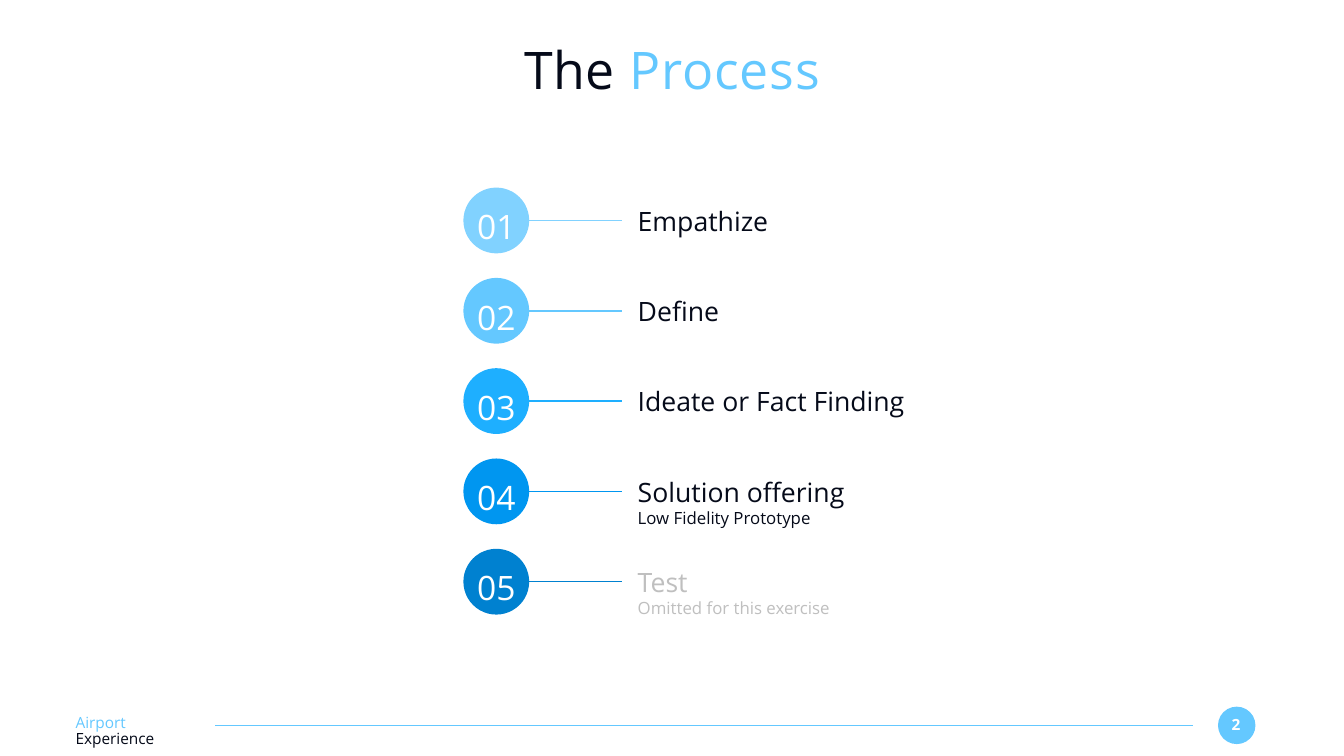
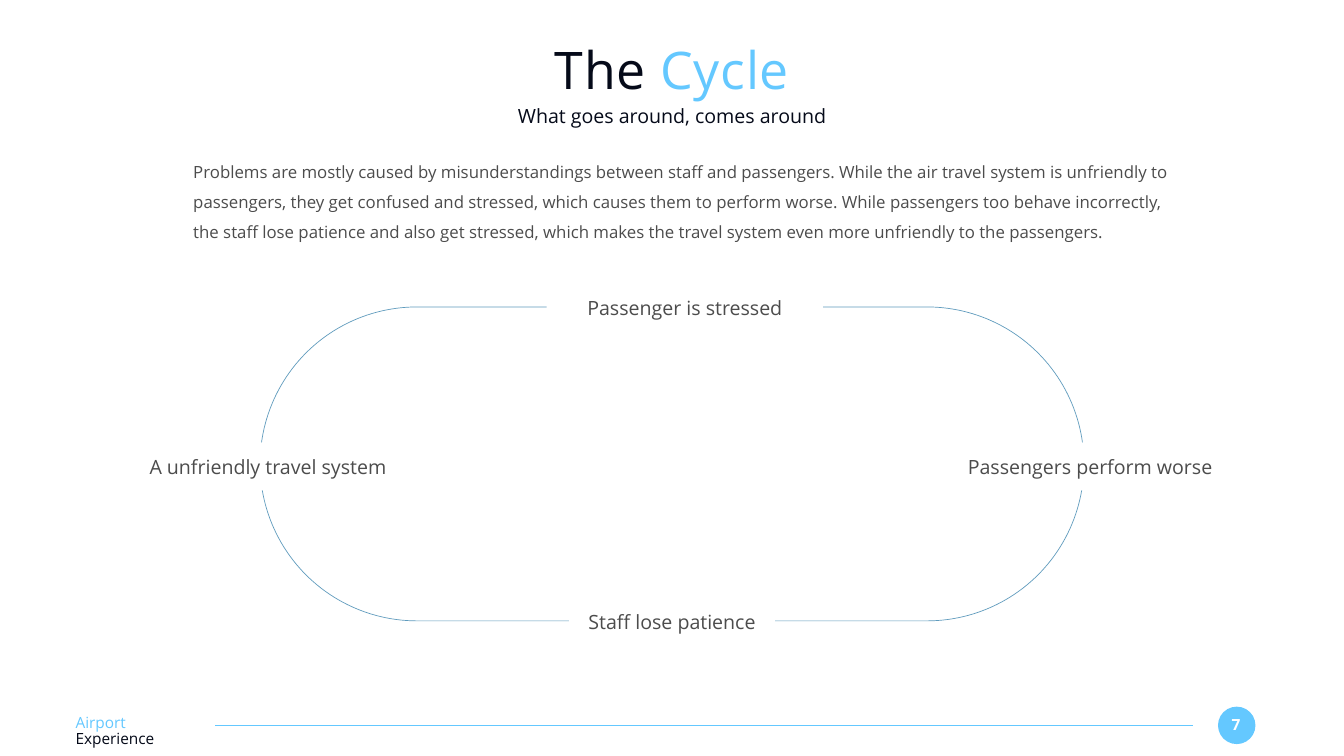
from lxml import etree
from pptx import Presentation
from pptx.dml.color import RGBColor
from pptx.enum.shapes import MSO_CONNECTOR as LINK, MSO_SHAPE as KIND
from pptx.enum.text import MSO_ANCHOR as ANCHOR, MSO_AUTO_SIZE as AUTO, PP_ALIGN as ALIGN
from pptx.oxml.ns import qn
from pptx.util import Pt

HUES = {
    "ink": "050A19", "sky": "64C8FF", "white": "FFFFFF", "gray": "4C4C4C",
    "mute": "BFBFBF", "ring": "5F9BBD", "step1": "81D2FF", "step2": "64C8FF",
    "step3": "1EAFFF", "step4": "0096F0", "step5": "0081D0",
}
RGB = {name: RGBColor.from_string(code) for name, code in HUES.items()}
FONT = "Open Sans"


def write(shape, paras, align=ALIGN.CENTER, anchor=ANCHOR.MIDDLE, pad=(0, 0), gap=None):
    """Fill a shape with paragraphs, each given as (size, (text, hue), ...)."""
    frame = shape.text_frame
    frame.word_wrap = True
    frame.auto_size = AUTO.NONE
    frame.vertical_anchor = anchor
    frame.margin_left = frame.margin_right = Pt(pad[0])
    frame.margin_top = frame.margin_bottom = Pt(pad[1])
    for i, (size, *runs) in enumerate(paras):
        para = frame.add_paragraph() if i else frame.paragraphs[0]
        para.alignment = align
        if gap:
            para.line_spacing = gap
        para.font.name, para.font.size = FONT, Pt(size)
        para.font.color.rgb = RGB[runs[0][1]]
        for text, hue in runs:
            run = para.add_run()
            run.text = text
            if hue != runs[0][1]:
                run.font.color.rgb = RGB[hue]
    return frame.paragraphs[0]


def draw(shapes, kind, box, fill=None):
    shape = shapes.add_shape(kind, *map(Pt, box))
    shape.shadow.inherit = False
    shape.line.fill.background()
    if fill:
        shape.fill.solid()
        shape.fill.fore_color.rgb = RGB[fill]
    else:
        shape.fill.background()
    return shape


deck = Presentation()
deck.slide_width, deck.slide_height = Pt(1920), Pt(1080)
rules = []

# Shared title and footer
slides = []
for layout, word, page in [(5, "Process", "2"), (1, "Cycle", "7")]:
    slide = deck.slides.add_slide(deck.slide_layouts[layout])
    slides.append(slide)
    shapes = slide.shapes

    title = shapes.title
    title.left, title.top, title.width, title.height = map(Pt, (132, 52.5, 1656, 91.5))
    para = write(title, [(74, ("The ", "ink"), (word, "sky"))])
    for run in para.runs:
        run.font._element.set("spc", "100")

    draw(shapes, KIND.OVAL, (1740, 1009.5, 53.5, 53.5), "sky")
    number = shapes.add_textbox(*map(Pt, (1744.5, 1021.5, 42.5, 26.5)))
    write(number, [(22, (page, "white"))]).font.bold = True
    rule = shapes.add_connector(LINK.STRAIGHT, Pt(1704), Pt(1036), Pt(307.5), Pt(1036))
    rules.append((rule, "sky", 1.5))
    brand = shapes.add_textbox(*map(Pt, (108, 1021, 186.5, 26.5)))
    write(brand, [(22, ("Airport ", "sky"), ("Experience", "ink"))],
          ALIGN.LEFT, ANCHOR.TOP, gap=0.9)

process, cycle = slides

# Process: five numbered steps
steps = [
    ("Empathize", None, "ink"),
    ("Define", None, "ink"),
    ("Ideate or Fact Finding", None, "ink"),
    ("Solution offering", "Low Fidelity Prototype", "ink"),
    ("Test", "Omitted for this exercise", "mute"),
]
for i, (name, note, hue) in enumerate(steps):
    top = 268 + 129 * i
    mid = top + 47
    tint = f"step{i + 1}"
    group = process.shapes.add_group_shape().shapes
    draw(group, KIND.OVAL, (662, top, 94, 94), tint)
    rule = group.add_connector(LINK.STRAIGHT, Pt(748), Pt(mid), Pt(889), Pt(mid))
    rules.append((rule, tint, 2.25))
    number = group.add_textbox(*map(Pt, (672, top + 14.5, 74, 70)))
    write(number, [(48, (f"{i + 1:02}", "white"))], gap=1.2)
    paras = [(38, (name, hue))]
    if note:
        paras.append((24, (note, hue)))
    label = group.add_textbox(*map(Pt, (911, top + 24, 453, 75 if note else 46)))
    write(label, paras, ALIGN.LEFT)

# Cycle: subtitle, summary and loop
body = cycle.placeholders[1]
body.left, body.top, body.width, body.height = map(Pt, (132, 146, 1656, 35.5))
para = write(body, [(28, ("What goes around, comes around", "ink"))], anchor=ANCHOR.BOTTOM)
para.space_before = Pt(20)
props = para._p.get_or_add_pPr()
props.set("marL", "0")
props.set("indent", "0")
props.find(qn("a:defRPr")).addprevious(etree.Element(qn("a:buNone")))

summary = cycle.shapes.add_textbox(*map(Pt, (269, 213, 1418.5, 133)))
write(summary, [(24, (
    "Problems are mostly caused by misunderstandings between staff and passengers. "
    "While the air travel system is unfriendly to passengers, they get confused and "
    "stressed, which causes them to perform worse. While passengers too behave "
    "incorrectly, the staff lose patience and also get stressed, which makes the travel "
    "system even more unfriendly to the passengers.", "gray"))],
    ALIGN.LEFT, ANCHOR.TOP, (7.2, 3.6), 1.5)

group = cycle.shapes.add_group_shape().shapes
ring = draw(group, KIND.ROUNDED_RECTANGLE, (371.5, 438.5, 1177, 448.5))
ring.adjustments[0] = 0.5
ring.line.color.rgb = RGB["ring"]
ring.line.width = Pt(1)
stages = [
    ("Passenger is stressed", (781, 418.5, 394.5, 41)),
    ("Staff lose patience", (813, 867, 294, 41)),
    ("A unfriendly travel system", (180.5, 632, 404.5, 68.5)),
    ("Passengers perform worse", (1355, 632, 404.5, 68.5)),
]
for name, box in stages:
    label = draw(group, KIND.RECTANGLE, box, "white")
    write(label, [(28, (name, "gray"))], pad=(7.2, 3.6))

for rule, hue, width in rules:
    rule.line.color.rgb = RGB[hue]
    rule.line.width = Pt(width)
    etree.SubElement(rule._element.spPr, qn("a:effectLst"))

deck.save("out.pptx")
